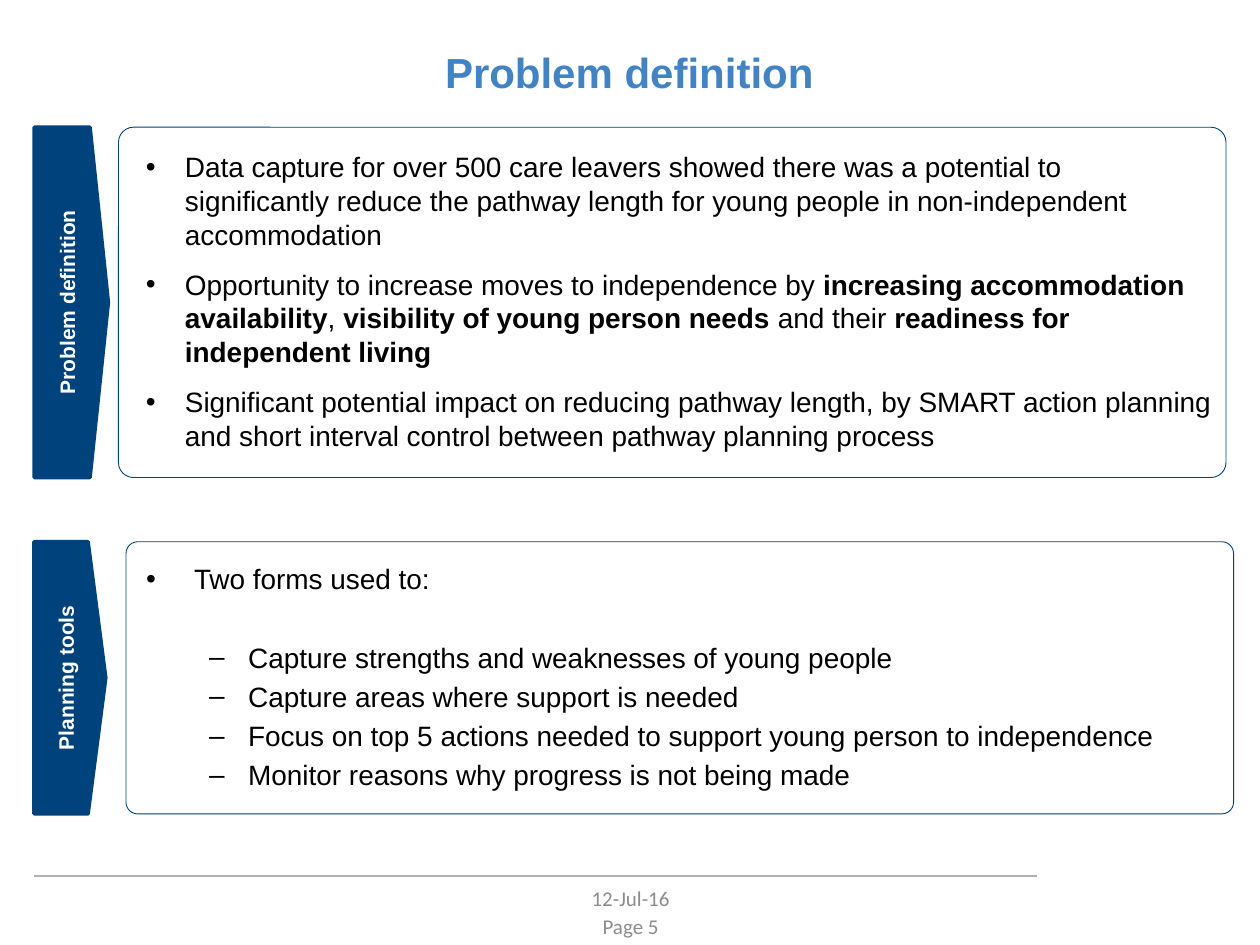
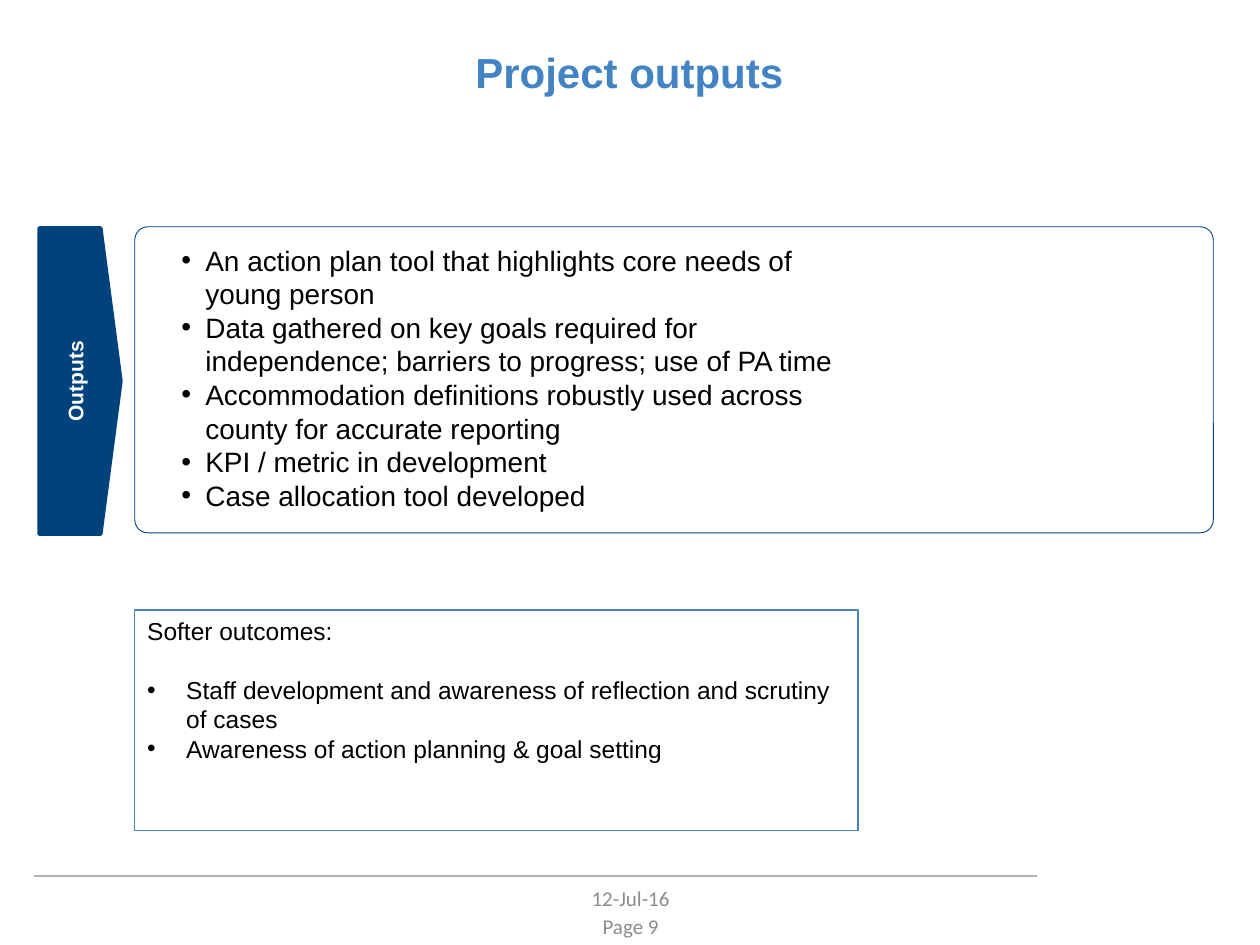
from lxml.etree import SubElement
from pptx import Presentation
from pptx.dml.color import RGBColor
from pptx.enum.shapes import MSO_CONNECTOR as Connector, MSO_SHAPE as Shape
from pptx.enum.text import MSO_ANCHOR as Anchor, MSO_AUTO_SIZE as AutoSize, PP_ALIGN as Align
from pptx.oxml.ns import qn
from pptx.util import Inches, Pt

NAVY, BLUE, SKY = "00427C", "4283C4", "4F81BD"
BLACK, WHITE, GREY, SILVER = "000000", "FFFFFF", "8C8C8C", "B2B2B2"
DATE = "12-Jul-16"

PROBLEM = [
    "Data capture for over 500 care leavers showed there was a potential to significantly "
    "reduce the pathway length for young people in non-independent accommodation",
    "Opportunity to increase moves to independence by **increasing accommodation availability**, "
    "**visibility of young person needs** and their **readiness for independent living**",
    "Significant potential impact on reducing pathway length, by SMART action planning "
    "and short interval control between pathway planning process",
]
PLANNING_LEAD = "Two forms used to:"
PLANNING = [
    "Capture strengths and weaknesses of young people",
    "Capture areas where support is needed",
    "Focus on top 5 actions needed to support young person to independence",
    "Monitor reasons why progress is not being made",
]
OUTPUTS = [
    "An action plan tool that highlights core needs of young person",
    "Data gathered on key goals required for independence; barriers to progress; use of PA time",
    "Accommodation definitions robustly used across county for accurate reporting",
    "KPI / metric in development",
    "Case allocation tool developed",
]
SOFTER_LEAD = "Softer outcomes:"
SOFTER = [
    "Staff development and awareness of reflection and scrutiny of cases",
    "Awareness of action planning & goal setting",
]


def color(value):
    return RGBColor.from_string(value)


def place(item, at):
    item.left, item.top, item.width, item.height = map(Inches, at)


def prepare(box, anchor=Anchor.TOP):
    frame = box.text_frame
    frame.word_wrap = True
    frame.auto_size = AutoSize.NONE
    frame.vertical_anchor = anchor
    return frame


def write(frame, text, size=16, font="Arial", ink=BLACK, bold=False, align=Align.LEFT,
          bullet=None, margin=0, hang=0, level=0, before=0):
    """Add a paragraph to the frame; text between double asterisks is bold."""
    para = frame.paragraphs[0] if not frame.text else frame.add_paragraph()
    para.level = level
    props = para._p.get_or_add_pPr()
    props.set("marL", str(Inches(margin)))
    props.set("indent", str(-Inches(hang)))
    if bullet:
        SubElement(props, qn("a:buFont")).set("typeface", "Arial")
        SubElement(props, qn("a:buChar")).set("char", bullet)
    else:
        SubElement(props, qn("a:buNone"))
    para.alignment = align
    para.space_before = Pt(before)
    for number, part in enumerate(text.split("**")):
        if part:
            span = para.add_run()
            span.text = part
            span.font.size, span.font.name = Pt(size), font
            span.font.bold = bold or number % 2 == 1
            span.font.color.rgb = color(ink)


def write_list(frame, items, gap=0, first_gap=0, **format):
    for number, item in enumerate(items):
        write(frame, item, before=gap if number else first_gap, **format)


def add_outline(page, kind, at, line, width, fill=None):
    shape = page.shapes.add_shape(kind, *map(Inches, at))
    shape.shadow.inherit = False
    shape.line.color.rgb = color(line)
    shape.line.width = Pt(width)
    if fill:
        shape.fill.solid()
        shape.fill.fore_color.rgb = color(fill)
    else:
        shape.fill.background()
    return shape


def add_section(page, label, tab_at, panel_at):
    panel = add_outline(page, Shape.ROUNDED_RECTANGLE, panel_at, NAVY, 0.5)
    panel.adjustments[0] = 0.043
    tab = add_outline(page, Shape.PENTAGON, tab_at, NAVY, 2, NAVY)
    tab.adjustments[0] = 0.246
    frame = prepare(tab, Anchor.MIDDLE)
    frame.margin_left = frame.margin_right = frame.margin_top = frame.margin_bottom = 0
    frame._txBody.bodyPr.set("vert", "vert270")
    write(frame, label, size=12, ink=WHITE, bold=True, align=Align.CENTER)


def add_page(deck, title, number):
    page = deck.slides.add_slide(deck.slide_layouts[1])
    place(page.shapes.title, (0.27, 0.3, 9.45, 0.54))
    write(prepare(page.shapes.title, Anchor.MIDDLE), title, size=24, ink=BLUE, bold=True,
          align=Align.CENTER)
    rule = page.shapes.add_connector(Connector.STRAIGHT, *map(Inches, (0.27, 6.95, 8.23, 6.95)))
    rule.line.color.rgb = color(SILVER)
    rule.line.width = Pt(1)
    SubElement(rule._element.spPr, qn("a:effectLst"))
    for text, top in ((DATE, 7.02), (f"Page {number}", 7.24)):
        box = page.shapes.add_textbox(*map(Inches, (3.42, top, 3.17, 0.22)))
        write(prepare(box, Anchor.MIDDLE), text, size=12, font="Calibri", ink=GREY,
              align=Align.CENTER)
    return page


def add_problem_page(deck):
    page = add_page(deck, "Problem definition", 5)
    add_section(page, "Problem definition", (0.27, 1.01, 0.59, 2.78), (0.94, 1.01, 8.79, 2.78))
    add_section(page, "Planning tools", (0.27, 4.3, 0.57, 2.16), (1, 4.3, 8.79, 2.16))
    problem = page.shapes.add_textbox(*map(Inches, (1.06, 1.14, 8.67, 2.52)))
    write_list(prepare(problem), PROBLEM, gap=9.6, bullet="•", margin=0.31, hang=0.31)
    planning = page.placeholders[1]
    place(planning, (1.06, 4.41, 8.66, 2.05))
    frame = prepare(planning)
    write(frame, PLANNING_LEAD, bullet="•", margin=0.38, hang=0.38)
    write_list(frame, PLANNING, gap=3.2, first_gap=25.6, bullet="–", margin=0.81, hang=0.31,
               level=1)


def add_outputs_page(deck):
    page = add_page(deck, "Project outputs", 9)
    add_section(page, "Outputs", (0.31, 1.81, 0.65, 2.43), (1.07, 1.8, 8.56, 2.43))
    outputs = page.placeholders[1]
    place(outputs, (1.34, 1.88, 5.62, 2.49))
    write_list(prepare(outputs), OUTPUTS, bullet="•", margin=0.19, hang=0.19)
    softer = add_outline(page, Shape.RECTANGLE, (1.07, 4.84, 5.74, 1.75), SKY, 0.75)
    frame = prepare(softer)
    write(frame, SOFTER_LEAD, size=14)
    write_list(frame, SOFTER, first_gap=16.8, size=14, bullet="•", margin=0.31, hang=0.31)


def main():
    deck = Presentation()
    deck.slide_width, deck.slide_height = Inches(10), Inches(7.5)
    add_problem_page(deck)
    add_outputs_page(deck)
    deck.save("out.pptx")


if __name__ == "__main__":
    main()
